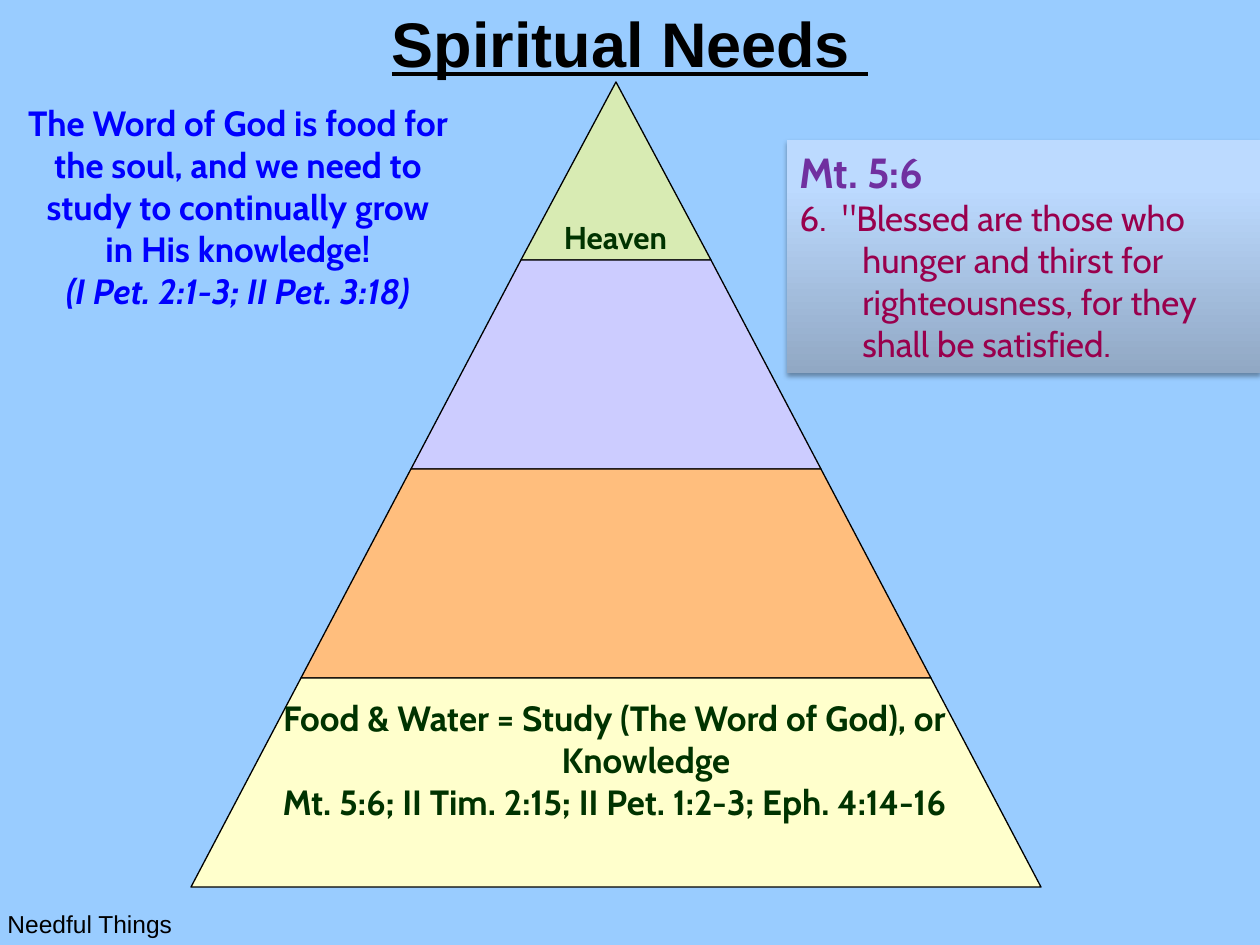
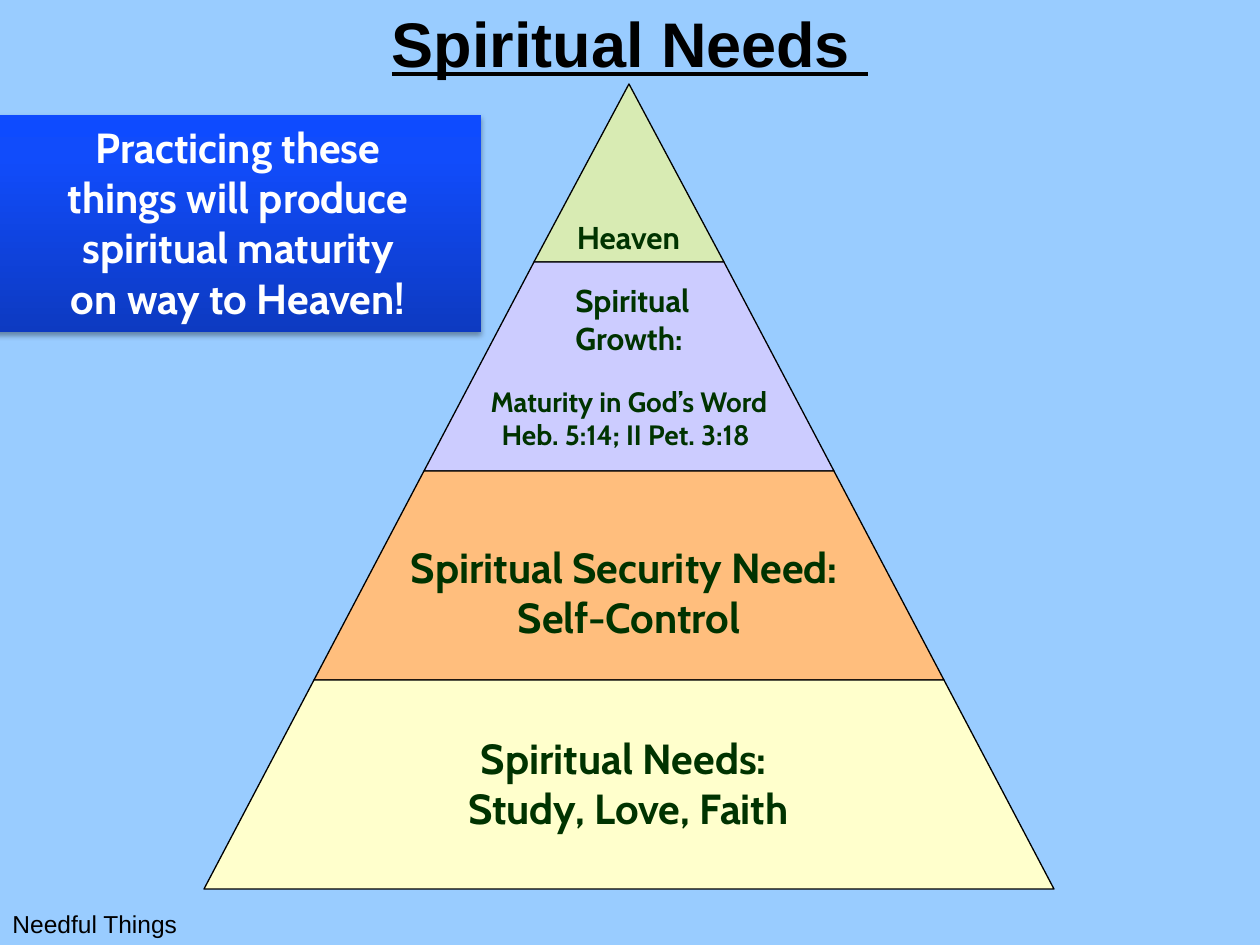
import copy

import pptx
import pptx.dml.color
import pptx.enum.shapes
import pptx.enum.text
import pptx.oxml
import pptx.oxml.ns
import pptx.util

RGB = pptx.dml.color.RGBColor
ALIGN = pptx.enum.text.PP_ALIGN
ANCHOR = pptx.enum.text.MSO_ANCHOR

SKY = RGB(0x99, 0xCC, 0xFF)
BLACK = RGB(0x00, 0x00, 0x00)
WHITE = RGB(0xFF, 0xFF, 0xFF)
BLUE = RGB(0x00, 0x00, 0xFF)
GREEN = RGB(0x00, 0x33, 0x00)
PURPLE = RGB(0x70, 0x30, 0xA0)
WINE = RGB(0x99, 0x00, 0x4D)
TIERS = [RGB(0xD8, 0xEB, 0xB3), RGB(0xCC, 0xCC, 0xFF),
         RGB(0xFF, 0xBE, 0x7D), RGB(0xFF, 0xFF, 0xCC)]
STEEL = [RGB(0x91, 0xA8, 0xC4), RGB(0xBC, 0xDA, 0xFF), RGB(0xBE, 0xDB, 0xFF)]
ROYAL = [RGB(0x0D, 0x3A, 0xC1), RGB(0x11, 0x4C, 0xFB), RGB(0x0E, 0x4B, 0xFF)]

SCALE = 914400 / 126
HANG = 63
SHADE = ('<a:outerShdw %s blurRad="39370" dist="22860" dir="5400000" rotWithShape="0">'
         '<a:srgbClr val="000000"><a:alpha val="35000"/></a:srgbClr></a:outerShdw>'
         % pptx.oxml.ns.nsdecls("a"))


def px(*sizes):
    """Turn pixel lengths into a list of EMU lengths."""
    return [pptx.util.Emu(round(size * SCALE)) for size in sizes]


def write(shape, lines, size, tone, face="Cabin", bold=True, align=ALIGN.CENTER, hang=HANG):
    """Fill a shape with one paragraph per line, each with a hanging indent."""
    frame = shape.text_frame
    frame.word_wrap = True
    frame.vertical_anchor = ANCHOR.TOP
    for place, line in enumerate(lines):
        para = frame.add_paragraph() if place else frame.paragraphs[0]
        para.alignment = align
        if hang:
            inset = px(hang)[0]
            props = para._p.get_or_add_pPr()
            props.set("marL", str(inset))
            props.set("indent", str(-inset))
        run = para.add_run()
        run.text = line
        run.font.name = face
        run.font.size = pptx.util.Pt(size)
        run.font.bold = bold
        run.font.color.rgb = tone
    return frame.paragraphs


deck = pptx.Presentation()
deck.slide_width, deck.slide_height = px(1260, 945)

# Apex, footer left edge, card place and colours, then labels: place, size, lines
pages = [
    dict(apex=(616, 82), foot=-5, card=(787, 140, 473, 233), shades=STEEL, labels=[
        ((533, 212, 165, 50), 18, ["Heaven"]),
        ((268, 690, 693, 183), 20, ["Food & Water = Study (The Word of God), or Knowledge",
                                    "Mt. 5:6; II Tim. 2:15; II Pet. 1:2-3; Eph. 4:14-16 "]),
    ]),
    dict(apex=(629, 84), foot=0, card=(-5, 115, 486, 217), shades=ROYAL, labels=[
        ((546, 212, 165, 50), 18, ["Heaven"]),
        ((282, 726, 693, 115), 24, ["Spiritual Needs: ", "Study, Love, Faith"]),
        ((316, 535, 626, 115), 24, ["Spiritual Security Need: ", "Self-Control"]),
        ((496, 275, 273, 89), 18, ["Spiritual", "Growth: "]),
        ((329, 378, 600, 84), 16, ["Maturity in God’s Word", "Heb. 5:14; II Pet. 3:18 "]),
    ]),
]

slides, cards = [], []
for page in pages:
    slide = deck.slides.add_slide(deck.slide_layouts[6])
    slides.append(slide)
    slide.background.fill.solid()
    slide.background.fill.fore_color.rgb = SKY

    foot = slide.shapes.add_textbox(*px(page["foot"], 903, 400, 42))
    write(foot, ["Needful Things"], 14, BLACK, "Arial", False, ALIGN.LEFT, 0)
    title = slide.shapes.add_textbox(*px(0, 0, 1260, 84))
    head = write(title, ["Spiritual Needs "], 36, BLACK, "Arial", hang=0)
    head[0].runs[0].font.underline = True
    title.text_frame.vertical_anchor = ANCHOR.MIDDLE

    # The top tier is a triangle; each lower tier widens by the same step
    mid, peak = page["apex"]
    group = slide.shapes.add_group_shape()
    for row, tone in enumerate(TIERS):
        low = peak + 178 + 209 * row
        top = low - 209 if row else peak
        wide = 95 + 110 * row
        slim = wide - 110 if row else 0
        pen = group.shapes.build_freeform(*px(mid - slim, top))
        spots = [(mid + slim, top)] if row else []
        spots += [(mid + wide, low), (mid - wide, low)]
        pen.add_line_segments([px(*spot) for spot in spots], close=True)
        tier = pen.convert_to_shape()
        tier.shadow.inherit = False
        tier.fill.solid()
        tier.fill.fore_color.rgb = tone
        tier.line.color.rgb = BLACK
        tier.line.width = pptx.util.Pt(0.75)

    for place, size, lines in page["labels"]:
        write(slide.shapes.add_textbox(*px(*place)), lines, size, GREEN)

    card = slide.shapes.add_shape(pptx.enum.shapes.MSO_SHAPE.RECTANGLE, *px(*page["card"]))
    cards.append(card)
    card.line.fill.background()
    card.fill.gradient()
    card.fill.gradient_angle = 90
    props = card._element.spPr
    stops = props.find(".//" + pptx.oxml.ns.qn("a:gsLst"))
    stops.insert(1, copy.deepcopy(stops[0]))
    for stop, spot, tone in zip(card.fill.gradient_stops, (0, 0.8, 1), page["shades"]):
        stop.position = spot
        stop.color.rgb = tone
    card.shadow.inherit = False
    props.find(pptx.oxml.ns.qn("a:effectLst")).append(pptx.oxml.parse_xml(SHADE))

creed = slides[0].shapes.add_textbox(*px(-5, 95, 494, 267))
lines = write(creed, ["The Word of God is food for ", "the soul, and we need to ",
                      "study to continually grow ", "in His knowledge! ",
                      "(I Pet. 2:1-3; II Pet. 3:18) "], 20, BLUE)
lines[-1].runs[0].font.italic = True

verse = write(cards[0], ["Mt. 5:6", "6.  \"Blessed are those who hunger and thirst for "
                         "righteousness, for they shall be satisfied."],
              20, WINE, bold=False, align=ALIGN.LEFT)
name = verse[0].runs[0].font
name.size = pptx.util.Pt(24)
name.bold = True
name.color.rgb = PURPLE

write(cards[1], ["Practicing these", "things will produce", "spiritual maturity",
                 "on way to Heaven!"], 24, WHITE)

deck.save("out.pptx")
